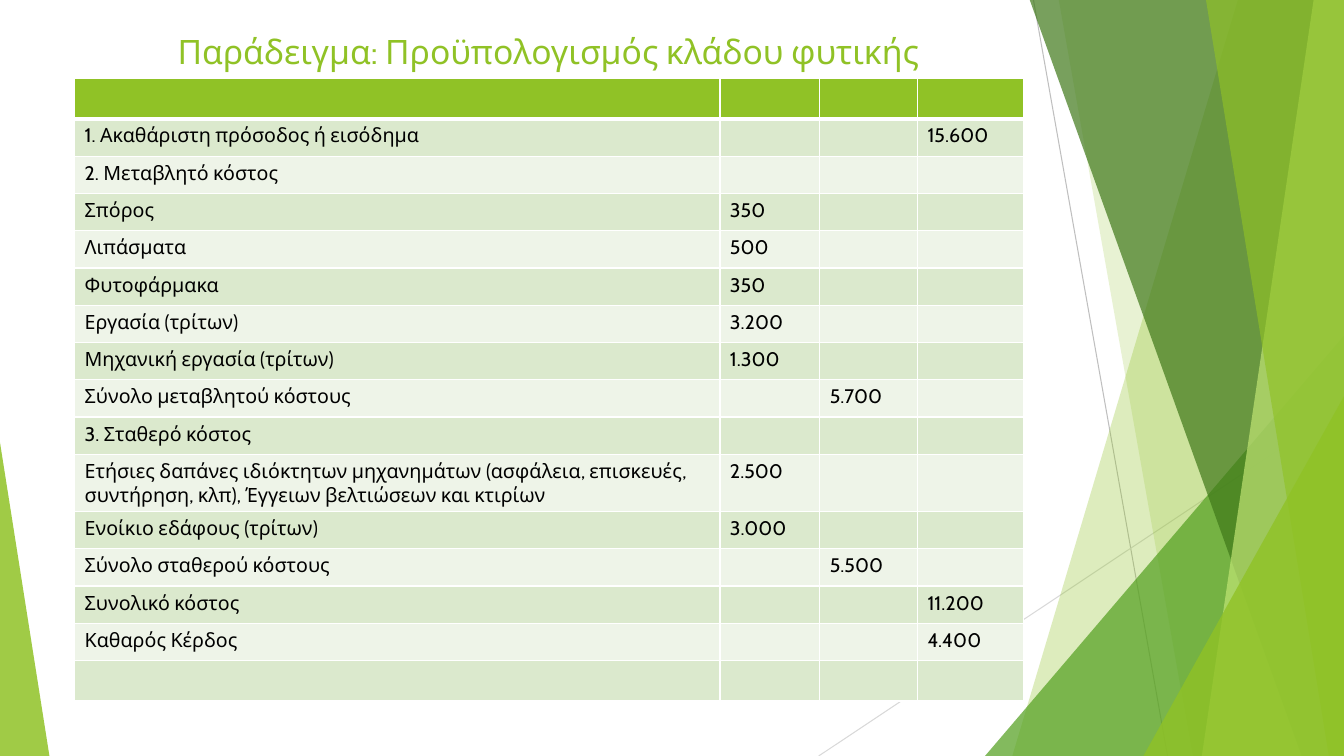
"""Builds a slide with a crop budget table on a green faceted background."""
from lxml import etree
from pptx import Presentation
from pptx.dml.color import RGBColor
from pptx.enum import shapes, text
from pptx.oxml import ns
from pptx.util import Inches, Pt

GREEN = RGBColor(0x90, 0xC2, 0x26)
MID_GREEN = RGBColor(0x54, 0xA0, 0x21)
DARK_GREEN = RGBColor(0x3F, 0x78, 0x19)
LIME = RGBColor(0xC0, 0xE4, 0x74)
BAND_DARK = RGBColor(0xDB, 0xE9, 0xCD)
BAND_LIGHT = RGBColor(0xEE, 0xF4, 0xE8)
GRAY = RGBColor(0xBF, 0xBF, 0xBF)
LIGHT_GRAY = RGBColor(0xD9, 0xD9, 0xD9)
BLACK = RGBColor(0, 0, 0)
FONT = "Cabin"
RIGHT, TOP, BOTTOM = 13.33, -0.01, 7.5


def write(tf, content, size, color, align=text.PP_ALIGN.LEFT):
    p = tf.paragraphs[0]
    p.alignment = align
    r = p.add_run()
    r.text = content
    r.font.name, r.font.size = FONT, Pt(size)
    r.font.color.rgb = color


def paint(sp, color, opacity):
    sp.shadow.inherit = False
    sp.line.fill.background()
    sp.fill.solid()
    sp.fill.fore_color.rgb = color
    srgb = sp._element.spPr.find(".//" + ns.qn("a:srgbClr"))
    etree.SubElement(srgb, ns.qn("a:alpha")).set("val", str(opacity * 1000))


prs = Presentation()
prs.slide_width, prs.slide_height = Inches(RIGHT), Inches(BOTTOM)
s = prs.slides.add_slide(prs.slide_layouts[6])

for x1, y1, x2, y2, color in [
    (10.25, 0, 11.58, BOTTOM, GRAY),
    (RIGHT, 4.03, 8.12, BOTTOM, LIGHT_GRAY),
]:
    line = s.shapes.add_connector(
        shapes.MSO_CONNECTOR.STRAIGHT, Inches(x1), Inches(y1), Inches(x2), Inches(y2))
    line.line.color.rgb = color
    line.line.width = Pt(0.75)
    etree.SubElement(line._element.spPr, ns.qn("a:effectLst"))

FACETS = [
    ("band", 12.28, 10.04, GREEN, 30),
    ("band", 10.5, 11.83, GREEN, 20),
    ("triangle", 9.77, 3.33, 3.56, 1, MID_GREEN, 72),
    ("band", 10.21, 12.91, DARK_GREEN, 70),
    ("band", 13.03, 11.92, LIME, 70),
    ("band", 11.96, 13.18, GREEN, 65),
    ("triangle", 11.34, 3.93, 1.99, 1, GREEN, 80),
    ("triangle", 0, 4.39, 0.49, 0, GREEN, 85),
]
for kind, *geometry, color, opacity in FACETS:
    if kind == "band":
        top_x, bottom_x = geometry
        fb = s.shapes.build_freeform(Inches(top_x), Inches(TOP))
        fb.add_line_segments([
            (Inches(x), Inches(y))
            for x, y in [(RIGHT, TOP), (RIGHT, BOTTOM), (bottom_x, BOTTOM)]])
        sp = fb.convert_to_shape()
    else:
        x, y, width, apex = geometry
        sp = s.shapes.add_shape(
            shapes.MSO_SHAPE.ISOSCELES_TRIANGLE,
            Inches(x), Inches(y), Inches(width), Inches(BOTTOM - y))
        sp.adjustments[0] = apex
    paint(sp, color, opacity)

title = s.shapes.add_textbox(Inches(0.74), Inches(0.26), Inches(9.4), Inches(0.61))
title.text_frame.word_wrap = True
write(title.text_frame, "Παράδειγμα: Προϋπολογισμός κλάδου φυτικής",
      24, GREEN, text.PP_ALIGN.CENTER)

BUDGET = [
    ("", "", "", ""),
    ("1. Ακαθάριστη πρόσοδος ή εισόδημα", "", "", "15.600"),
    ("2. Μεταβλητό κόστος", "", "", ""),
    ("Σπόρος", "350", "", ""),
    ("Λιπάσματα", "500", "", ""),
    ("Φυτοφάρμακα", "350", "", ""),
    ("Εργασία (τρίτων)", "3.200", "", ""),
    ("Μηχανική εργασία (τρίτων)", "1.300", "", ""),
    ("Σύνολο μεταβλητού κόστους", "", "5.700", ""),
    ("3. Σταθερό κόστος", "", "", ""),
    ("Ετήσιες δαπάνες ιδιόκτητων μηχανημάτων (ασφάλεια, επισκευές, "
     "συντήρηση, κλπ), Έγγειων βελτιώσεων και κτιρίων", "2.500", "", ""),
    ("Ενοίκιο εδάφους (τρίτων)", "3.000", "", ""),
    ("Σύνολο σταθερού κόστους", "", "5.500", ""),
    ("Συνολικό κόστος", "", "", "11.200"),
    ("Καθαρός Κέρδος", "", "", "4.400"),
    ("", "", "", ""),
]
table = s.shapes.add_table(
    len(BUDGET), 4, Inches(0.74), Inches(0.78), Inches(9.4), Inches(5.92)).table
for column, width in zip(table.columns, [6.4, 0.99, 0.97, 1.05]):
    column.width = Inches(width)
for i, values in enumerate(BUDGET):
    table.rows[i].height = Inches(0.37)
    for j, value in enumerate(values):
        cell = table.cell(i, j)
        tcPr = cell._tc.get_or_add_tcPr()
        for side in ("L", "R", "T", "B"):
            thick = (i, side) in [(0, "B"), (1, "T")]
            ln = etree.SubElement(tcPr, ns.qn("a:ln" + side), w=str(Pt(3 if thick else 1)))
            fill = etree.SubElement(ln, ns.qn("a:solidFill"))
            etree.SubElement(fill, ns.qn("a:srgbClr"), val="FFFFFF")
        cell.fill.solid()
        cell.fill.fore_color.rgb = GREEN if i == 0 else BAND_DARK if i % 2 else BAND_LIGHT
        if value:
            write(cell.text_frame, value, 14, BLACK)
        else:
            size = 14 if any(values) else 18
            end = etree.SubElement(cell.text_frame.paragraphs[0]._p, ns.qn("a:endParaRPr"))
            end.set("sz", str(size * 100))
            etree.SubElement(end, ns.qn("a:latin"), typeface=FONT)

prs.save("out.pptx")
